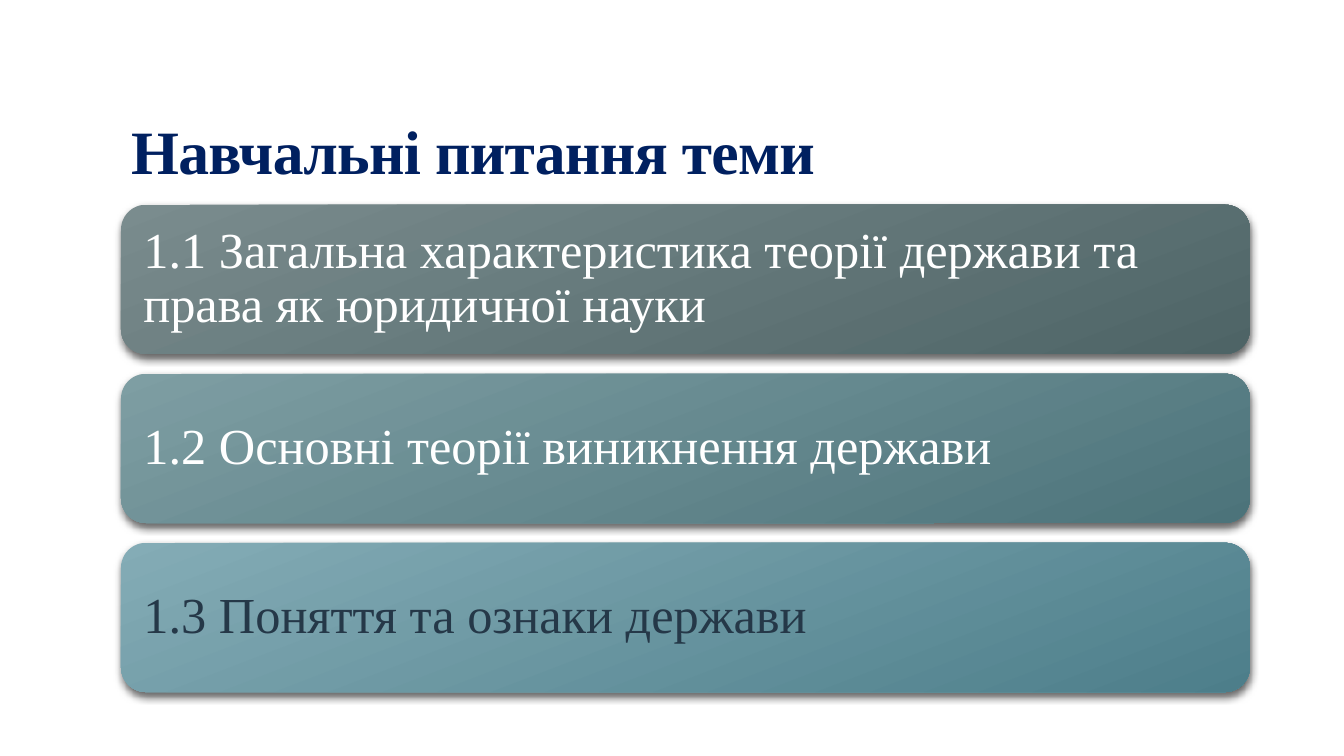
"""Build a slide listing the study questions of the topic as three gradient cards."""
from dataclasses import dataclass

import pptx
import pptx.dml.color
import pptx.enum.shapes
import pptx.enum.text
import pptx.oxml
import pptx.oxml.ns
import pptx.util

Cm = pptx.util.Cm
Pt = pptx.util.Pt
FONT = "Times New Roman"
CARD_LEFT, CARD_TOP, CARD_WIDTH, CARD_HEIGHT = 3.05, 5.16, 28.45, 3.76
CARD_PITCH = 4.26
CARD_INSET = 0.38


@dataclass
class Question:
    text: str
    start: str
    end: str
    color: str


QUESTIONS = [
    Question("1.1 Загальна характеристика теорії держави та права як юридичної науки",
             "7A8C8E", "4E6466", "FFFFFF"),
    Question("1.2 Основні теорії виникнення держави", "7E9EA3", "4C737A", "FFFFFF"),
    Question("1.3 Поняття та ознаки держави", "84ACB6", "4D7E8A", "253848"),
]


def rgb(value: str) -> pptx.dml.color.RGBColor:
    return pptx.dml.color.RGBColor.from_string(value)


def write(tf, text: str, *, size: float, color: str, bold: bool = False,
          line: float = 1.0, spacing: int = 0,
          anchor=pptx.enum.text.MSO_ANCHOR.MIDDLE) -> None:
    tf.word_wrap = True
    tf.auto_size = pptx.enum.text.MSO_AUTO_SIZE.NONE
    tf.vertical_anchor = anchor
    p = tf.paragraphs[0]
    p.alignment = pptx.enum.text.PP_ALIGN.LEFT
    p.line_spacing = line
    r = p.add_run()
    r.text = text
    r.font.name = FONT
    r.font.size = Pt(size)
    r.font.bold = bold
    r.font.color.rgb = rgb(color)
    if spacing:
        r.font._element.set("spc", str(spacing))


def add_shadow(sp) -> None:
    sp.shadow.inherit = False
    effects = sp._element.spPr.find(pptx.oxml.ns.qn("a:effectLst"))
    effects.append(pptx.oxml.parse_xml(
        f'<a:outerShdw {pptx.oxml.ns.nsdecls("a")} blurRad="{Pt(6)}" dist="{Pt(3)}" '
        'dir="5400000" algn="ctr" rotWithShape="0">'
        '<a:srgbClr val="000000"><a:alpha val="60000"/></a:srgbClr></a:outerShdw>'))


def add_card(s, question: Question, top: float) -> None:
    sp = s.shapes.add_shape(pptx.enum.shapes.MSO_SHAPE.ROUNDED_RECTANGLE, Cm(CARD_LEFT),
                            Cm(top), Cm(CARD_WIDTH), Cm(CARD_HEIGHT))
    sp.fill.gradient()
    sp.fill.gradient_angle = 360 - 69
    for stop, color in zip(sp.fill.gradient_stops, (question.start, question.end)):
        stop.color.rgb = rgb(color)
    sp.line.fill.background()
    add_shadow(sp)
    tf = sp.text_frame
    tf.margin_left = tf.margin_right = tf.margin_top = tf.margin_bottom = Cm(CARD_INSET)
    write(tf, question.text, size=36, color=question.color, line=0.9)


def main() -> None:
    prs = pptx.Presentation()
    prs.slide_width, prs.slide_height = Cm(33.87), Cm(19.05)
    s = prs.slides.add_slide(prs.slide_layouts[5])
    title = s.shapes.title
    title.left, title.top, title.width, title.height = Cm(3.05), Cm(0.79), Cm(27.94), Cm(4.04)
    write(title.text_frame, "Навчальні питання теми", size=44, color="002060", bold=True,
          line=0.85, spacing=-50, anchor=pptx.enum.text.MSO_ANCHOR.BOTTOM)
    for i, question in enumerate(QUESTIONS):
        add_card(s, question, CARD_TOP + i * CARD_PITCH)
    prs.save("out.pptx")


if __name__ == "__main__":
    main()
